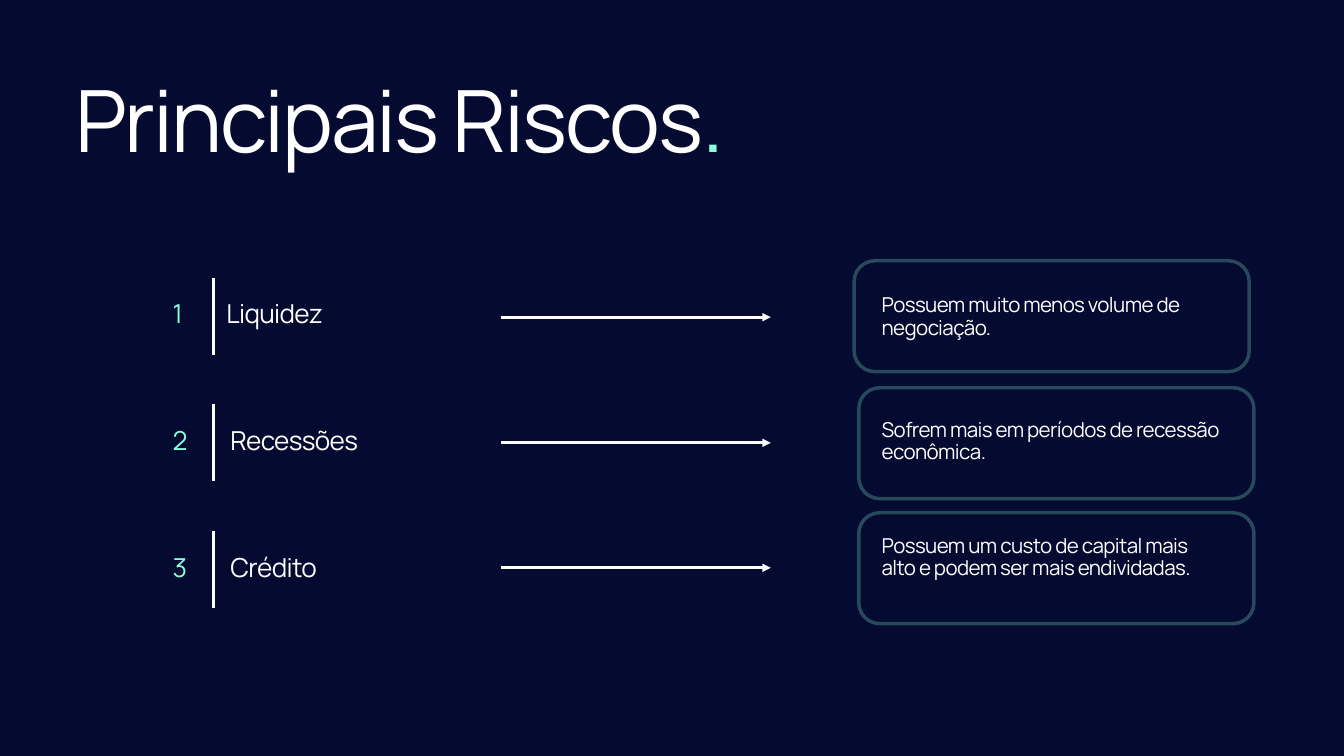
from dataclasses import dataclass

from lxml.etree import SubElement
from pptx import Presentation
from pptx.dml.color import RGBColor
from pptx.enum.shapes import MSO_CONNECTOR, MSO_SHAPE
from pptx.enum.text import MSO_AUTO_SIZE
from pptx.oxml.ns import qn
from pptx.util import Emu, Pt

PX = 9144  # EMU per px, on a canvas of 2000 by 1125 px


@dataclass(frozen=True)
class TextStyle:
    size: int
    leading: float
    tracking: int  # hundredths of a point


@dataclass(frozen=True)
class Theme:
    font: str = "Manrope"
    background: RGBColor = RGBColor.from_string("050A30")
    white: RGBColor = RGBColor.from_string("FFFFFF")
    mint: RGBColor = RGBColor.from_string("89FFDB")
    title: TextStyle = TextStyle(92, 101.2, -230)
    label: TextStyle = TextStyle(28, 30.8, -70)
    note: TextStyle = TextStyle(22, 24.2, -60)
    rule_width: float = 3
    frame_width: float = 3.75
    frame_opacity: int = 25


class SlideBuilder:
    def __init__(self, page, theme):
        self.page = page
        self.theme = theme
        fill = page.background.fill
        fill.solid()
        fill.fore_color.rgb = theme.background

    def text(self, left, top, width, height, spans, style, tab=None):
        box = self.page.shapes.add_textbox(*(Emu(v * PX) for v in (left, top, width, height)))
        frame = box.text_frame
        frame_format = {
            "margin_left": 0, "margin_top": 0, "margin_right": 0, "margin_bottom": 0,
            "word_wrap": True, "auto_size": MSO_AUTO_SIZE.SHAPE_TO_FIT_TEXT,
        }
        for name, value in frame_format.items():
            setattr(frame, name, value)
        para = frame.paragraphs[0]
        if tab is not None:
            tabs = SubElement(para._p.get_or_add_pPr(), qn("a:tabLst"))
            SubElement(tabs, qn("a:tab"), pos=str(tab * PX), algn="l")
        para.line_spacing = Pt(style.leading)
        for words, color in spans:
            span = para.add_run()
            span.text = words
            for name, value in {"name": self.theme.font, "size": Pt(style.size)}.items():
                setattr(span.font, name, value)
            span.font.color.rgb = color
            span._r.get_or_add_rPr().set("spc", str(style.tracking))

    def line(self, start_x, start_y, end_x, end_y, arrow=False):
        line = self.page.shapes.add_connector(
            MSO_CONNECTOR.STRAIGHT, *(Emu(v * PX) for v in (start_x, start_y, end_x, end_y)))
        line.line.width = Pt(self.theme.rule_width)
        line.line.color.rgb = self.theme.white
        if arrow:
            SubElement(line.line._get_or_add_ln(), qn("a:tailEnd"), type="triangle")
        SubElement(line._element.spPr, qn("a:effectLst"))

    def frame(self, left, top, width, height, radius):
        shape = self.page.shapes.add_shape(
            MSO_SHAPE.ROUNDED_RECTANGLE, *(Emu(v * PX) for v in (left, top, width, height)))
        shape.adjustments[0] = radius / height
        shape.shadow.inherit = False
        shape.fill.background()
        shape.line.width = Pt(self.theme.frame_width)
        shape.line.color.rgb = self.theme.mint
        color = shape.line._get_or_add_ln().find(".//" + qn("a:srgbClr"))
        SubElement(color, qn("a:alpha"), val=str(self.theme.frame_opacity * 1000))


@dataclass(frozen=True)
class Risk:
    name: str
    name_tab: int
    bar_top: int
    arrow_y: int
    frame_left: int
    frame_top: int
    note_top: int
    note: str


RISKS = [
    Risk("Liquidez", 80, 413, 472, 1271, 388, 438,
         "Possuem muito menos volume de negociação."),
    Risk("Recessões", 86, 601, 659, 1278, 577, 623,
         "Sofrem mais em períodos de recessão econômica."),
    Risk("Crédito", 86, 790, 845, 1278, 763, 796,
         "Possuem um custo de capital mais alto e podem ser mais endividadas."),
]


def main():
    deck = Presentation()
    deck.slide_width, deck.slide_height = Emu(2000 * PX), Emu(1125 * PX)
    theme = Theme()
    builder = SlideBuilder(deck.slides.add_slide(deck.slide_layouts[6]), theme)

    # Title
    builder.text(112, 112, 1714, 152,
                 [("Principais Riscos", theme.white), (".", theme.mint)], theme.title)

    # One row per risk: number and name, bar, arrow, framed note
    for number, risk in enumerate(RISKS, start=1):
        builder.text(257, risk.bar_top + 34, 590, 47,
                     [(str(number), theme.mint), ("\t" + risk.name, theme.white)],
                     theme.label, tab=risk.name_tab)
        builder.line(318, risk.bar_top + 115, 318, risk.bar_top)
        builder.line(745, risk.arrow_y, 1147, risk.arrow_y, arrow=True)
        builder.frame(risk.frame_left, risk.frame_top, 588, 165, radius=31)
        builder.text(1312, risk.note_top, 506, 70, [(risk.note, theme.white)], theme.note)

    deck.save("out.pptx")


if __name__ == "__main__":
    main()
